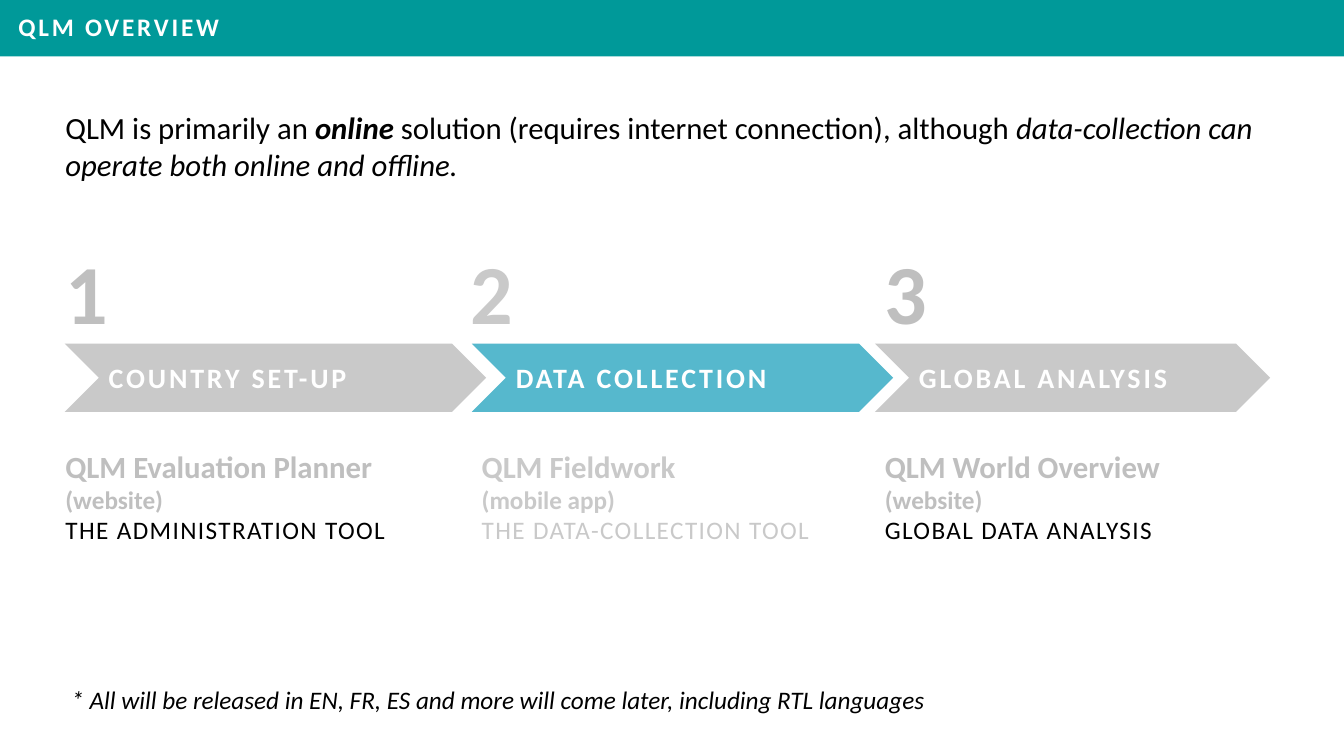
"""Build the QLM overview slide with its three process steps."""
from dataclasses import dataclass

from pptx import Presentation
from pptx.dml.color import RGBColor
from pptx.enum.shapes import MSO_SHAPE
from pptx.enum.text import MSO_ANCHOR, MSO_AUTO_SIZE, PP_ALIGN
from pptx.util import Cm, Pt

COLOURS = {
    "teal": "009999",
    "blue": "56B8CD",
    "silver": "C9C9C9",
    "grey": "BFBFBF",
    "black": "000000",
    "white": "FFFFFF",
}


@dataclass
class Step:
    """One step of the process, with lengths in centimetres."""
    title: str
    tool: str
    kind: str
    role: str
    number_left: float
    arrow_left: float
    arrow_width: float
    text_left: float
    arrow_colour: str = "silver"
    text_colour: str = "grey"
    role_colour: str = "black"


STEPS = [
    Step("COUNTRY SET-UP", "QLM Evaluation Planner", "(website)",
         "THE ADMINISTRATION TOOL", 1.4, 1.63, 10.62, 1.4),
    Step("DATA COLLECTION", "QLM Fieldwork", "(mobile app)",
         "THE DATA-COLLECTION TOOL", 11.61, 11.89, 10.62, 11.89,
         "blue", "silver", "silver"),
    Step("GLOBAL ANALYSIS", "QLM World Overview", "(website)",
         "GLOBAL DATA ANALYSIS", 22.05, 22.05, 9.96, 22.05),
]


def colour(name):
    """Return the named colour."""
    return RGBColor.from_string(COLOURS[name])


def add_text(para, text, size=18, ink="black", bold=False, italic=False, spacing=0):
    """Add a formatted span to a paragraph."""
    span = para.add_run()
    span.text = text
    font = span.font
    font.name = "Calibri"
    font.size = Pt(size)
    font.bold = bold
    font.italic = italic
    font.color.rgb = colour(ink)
    if spacing:
        font._element.set("spc", str(spacing * 100))


def add_box(page, left, top, width, height):
    """Add a wrapping text box and return its text frame."""
    box = page.shapes.add_textbox(Cm(left), Cm(top), Cm(width), Cm(height))
    box.text_frame.word_wrap = True
    return box.text_frame


def add_header(page, text, width):
    """Turn the title placeholder into the bar across the top."""
    bar = page.shapes.title
    bar.left, bar.top, bar.width, bar.height = 0, 0, width, Cm(1.42)
    bar.fill.solid()
    bar.fill.fore_color.rgb = colour("teal")
    frame = bar.text_frame
    frame.auto_size = MSO_AUTO_SIZE.NONE
    frame.vertical_anchor = MSO_ANCHOR.MIDDLE
    frame.margin_left = Cm(0.46)
    para = frame.paragraphs[0]
    para.alignment = PP_ALIGN.LEFT
    para.line_spacing = 0.9
    add_text(para, text, ink="white", bold=True, spacing=2)


def add_intro(page):
    """Add the opening statement."""
    para = add_box(page, 1.4, 2.62, 30.61, 2.13).paragraphs[0]
    add_text(para, "QLM is primarily an ", size=22)
    add_text(para, "online", size=22, bold=True, italic=True)
    add_text(para, " solution (requires internet connection), although ", size=22)
    add_text(para, "data-collection can operate both online and offline.",
             size=22, italic=True)


def add_number(page, step, number):
    """Add the large number above a step."""
    para = add_box(page, step.number_left, 6.22, 3.38, 2.44).paragraphs[0]
    para.line_spacing = 0.9
    add_text(para, str(number), size=60, ink=step.text_colour, bold=True)


def add_arrow(page, step):
    """Add the chevron that names a step."""
    arrow = page.shapes.add_shape(MSO_SHAPE.CHEVRON, Cm(step.arrow_left), Cm(8.66),
                                  Cm(step.arrow_width), Cm(1.72))
    arrow.shadow.inherit = False
    arrow.fill.solid()
    arrow.fill.fore_color.rgb = colour(step.arrow_colour)
    arrow.line.fill.background()
    frame = arrow.text_frame
    frame.vertical_anchor = MSO_ANCHOR.MIDDLE
    para = frame.paragraphs[0]
    para.alignment = PP_ALIGN.LEFT
    add_text(para, step.title, size=20, ink="white", bold=True, spacing=2)


def add_description(page, step):
    """Add the tool, its kind and its role below a step."""
    frame = add_box(page, step.text_left, 11.15, 10.21, 2.74)
    add_text(frame.paragraphs[0], step.tool, size=22, ink=step.text_colour, bold=True)
    add_text(frame.add_paragraph(), step.kind, ink=step.text_colour, bold=True)
    add_text(frame.add_paragraph(), step.role, ink=step.role_colour, spacing=1)


def add_footnote(page, text):
    """Add the note at the foot of the page."""
    para = add_box(page, 1.55, 17.12, 28.14, 1.02).paragraphs[0]
    add_text(para, text, italic=True)


def main():
    """Build and save the deck."""
    deck = Presentation()
    deck.slide_width, deck.slide_height = Cm(33.87), Cm(19.05)
    page = deck.slides.add_slide(deck.slide_layouts[5])
    add_header(page, "QLM OVERVIEW", deck.slide_width)
    add_intro(page)
    for number, step in enumerate(STEPS, start=1):
        add_number(page, step, number)
        add_arrow(page, step)
        add_description(page, step)
    add_footnote(page, "* All will be released in EN, FR, ES and more will come later, "
                       "including RTL languages")
    deck.save("out.pptx")


if __name__ == "__main__":
    main()
